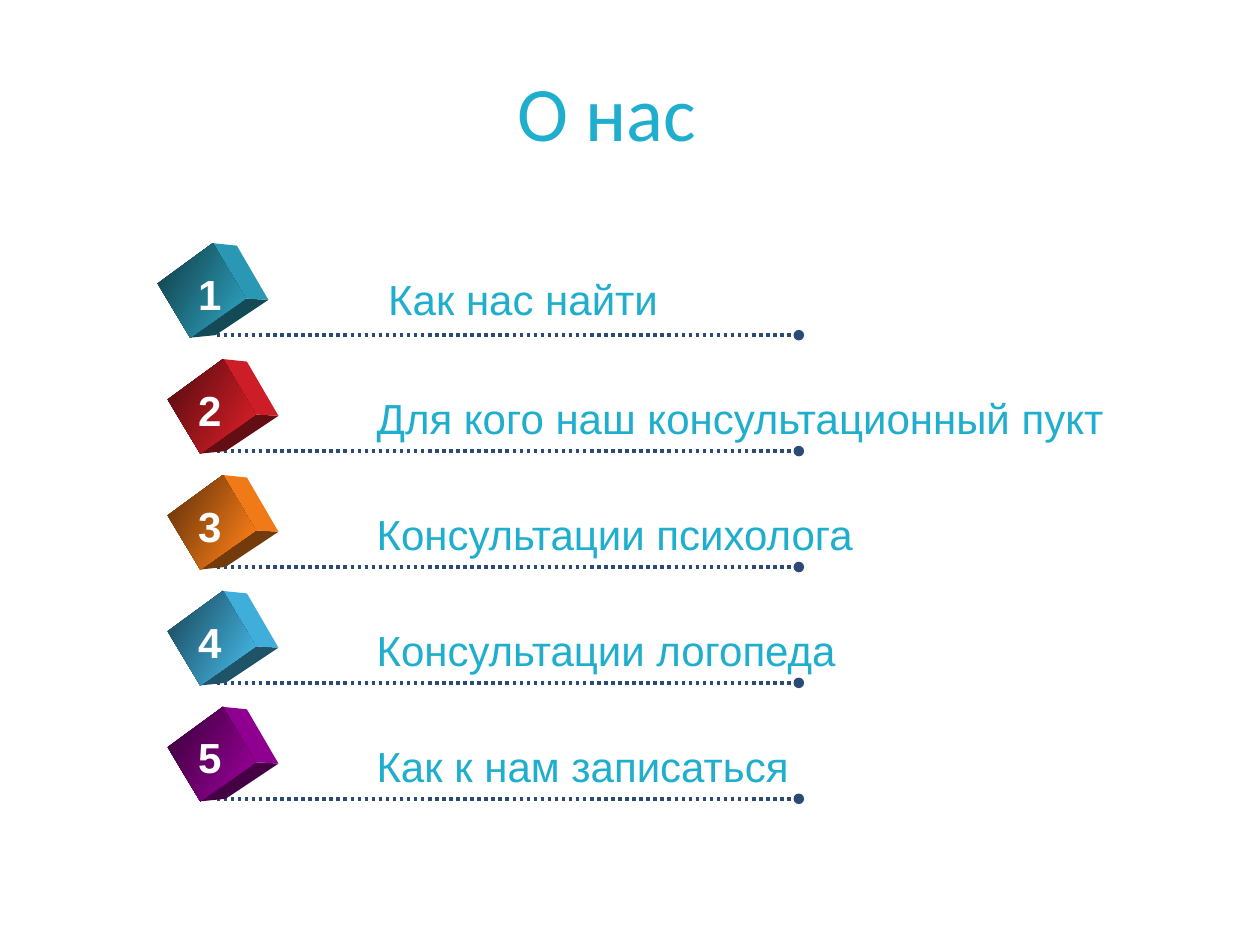
"""Build the numbered contents slide "О нас" with five cubes."""
from dataclasses import dataclass

from lxml import etree
from pptx import Presentation
from pptx import util as u
from pptx.dml import color
from pptx.enum import dml, shapes, text
from pptx.oxml import ns


@dataclass(frozen=True)
class Theme:
    accent: str = "1FAECD"
    rule: str = "2B4A76"
    light: str = "FFFFFF"
    cubes: tuple = ("2DA2BF", "DA1F28", "FF8119", "44B9E8", "990099")
    title_size: int = 44
    text_size: int = 24
    title_font: str = "Calibri"
    text_font: str = "Arial"


THEME = Theme()
COLUMNS, ROWS = 100, 75
LABELS = (
    " Как нас найти",
    "Для кого наш консультационный пукт",
    "Консультации психолога",
    "Консультации логопеда",
    "Как к нам записаться",
)
LABEL_WIDTHS = (25.5, 61.2, 41.1, 39.8, 36)
FIRST_RULE, STEP = 26.6, 9.2
FRONT = ((0, 3.2), (4.4, 0), (7, 4.4), (2.6, 7.5))
SIDE = ((4.4, 0), (6.3, 0.2), (8.8, 4.5), (7, 4.4))
BASE = ((7, 4.4), (8.8, 4.5), (4.6, 7.3), (2.6, 7.5))


def rgb(value, shade=1):
    """Return a colour scaled towards black."""
    return color.RGBColor(*(round(part * shade) for part in bytes.fromhex(value)))


def write(frame, words, *, size, font, fill, bold=False, align=text.PP_ALIGN.LEFT):
    """Put one formatted paragraph into a text frame."""
    para = frame.paragraphs[0]
    para.alignment = align
    span = para.add_run()
    span.text = words
    span.font.size, span.font.name, span.font.bold = u.Pt(size), font, bold
    span.font.color.rgb = rgb(fill)


@dataclass
class Composer:
    """Hold the theme and current page, and draw on its grid."""

    theme: Theme
    deck: object
    page: object

    def place(self, column, row):
        """Convert grid units to slide lengths."""
        return (round(self.deck.slide_width * column / COLUMNS),
                round(self.deck.slide_height * row / ROWS))

    def title(self, words, column, row, width, height):
        """Fill and move the title placeholder."""
        box = self.page.shapes.title
        box.left, box.top = self.place(column, row)
        box.width, box.height = self.place(width, height)
        box.text_frame.vertical_anchor = text.MSO_ANCHOR.MIDDLE
        write(box.text_frame, words, size=self.theme.title_size,
              font=self.theme.title_font, fill=self.theme.accent,
              align=text.PP_ALIGN.CENTER)

    def label(self, words, column, row, width, **style):
        """Add a one-line text box that fits its text."""
        box = self.page.shapes.add_textbox(*self.place(column, row), *self.place(width, 5))
        box.text_frame.word_wrap = False
        box.text_frame.auto_size = text.MSO_AUTO_SIZE.SHAPE_TO_FIT_TEXT
        write(box.text_frame, words, size=self.theme.text_size,
              font=self.theme.text_font, **style)

    def rule(self, start, end, row):
        """Add a dotted line that ends in a dot."""
        line = self.page.shapes.add_connector(
            shapes.MSO_CONNECTOR.STRAIGHT, *self.place(start, row), *self.place(end, row))
        line.line.color.rgb = rgb(self.theme.rule)
        line.line.width = u.Pt(2)
        line.line.dash_style = dml.MSO_LINE.ROUND_DOT
        etree.SubElement(line.line._get_or_add_ln(), ns.qn("a:tailEnd"), type="oval")
        etree.SubElement(line._element.spPr, ns.qn("a:effectLst"))

    def face(self, points, column, row):
        """Add one outlined cube face without a border."""
        start, *rest = [self.place(column + x, row + y) for x, y in points]
        builder = self.page.shapes.build_freeform(*start)
        builder.add_line_segments(rest)
        shape = builder.convert_to_shape()
        shape.shadow.inherit = False
        shape.line.fill.background()
        return shape.fill

    def cube(self, hue, column, row):
        """Add a shaded cube made of three faces."""
        for points, shade in ((BASE, 0.45), (SIDE, 0.94)):
            fill = self.face(points, column, row)
            fill.solid()
            fill.fore_color.rgb = rgb(hue, shade)
        fill = self.face(FRONT, column, row)
        fill.gradient()
        fill.gradient_angle = 330
        for stop, place, shade in zip(fill.gradient_stops, (0.1, 0.9), (0.42, 0.98)):
            stop.position = place
            stop.color.rgb = rgb(hue, shade)


def main():
    """Compose and save the slide."""
    deck = Presentation()
    deck.slide_width, deck.slide_height = u.Inches(10), u.Inches(7.5)
    page = deck.slides.add_slide(deck.slide_layouts[5])
    composer = Composer(THEME, deck, page)
    composer.title("О нас ", 2.8, 2.1, 92.1, 13.4)
    for index, (words, width, hue) in enumerate(zip(LABELS, LABEL_WIDTHS, THEME.cubes)):
        row = FIRST_RULE + index * STEP
        composer.rule(17.2, 63.4, row)
        composer.cube(hue, 13.3 if index else 12.5, row - 7.3)
        composer.label(str(index + 1), 14.7, row - 5.8, 3.9, fill=THEME.light,
                       bold=True, align=text.PP_ALIGN.CENTER)
        composer.label(words, 28.9, row - (5.1 if index else 5.4), width, fill=THEME.accent)
    deck.save("out.pptx")


if __name__ == "__main__":
    main()
